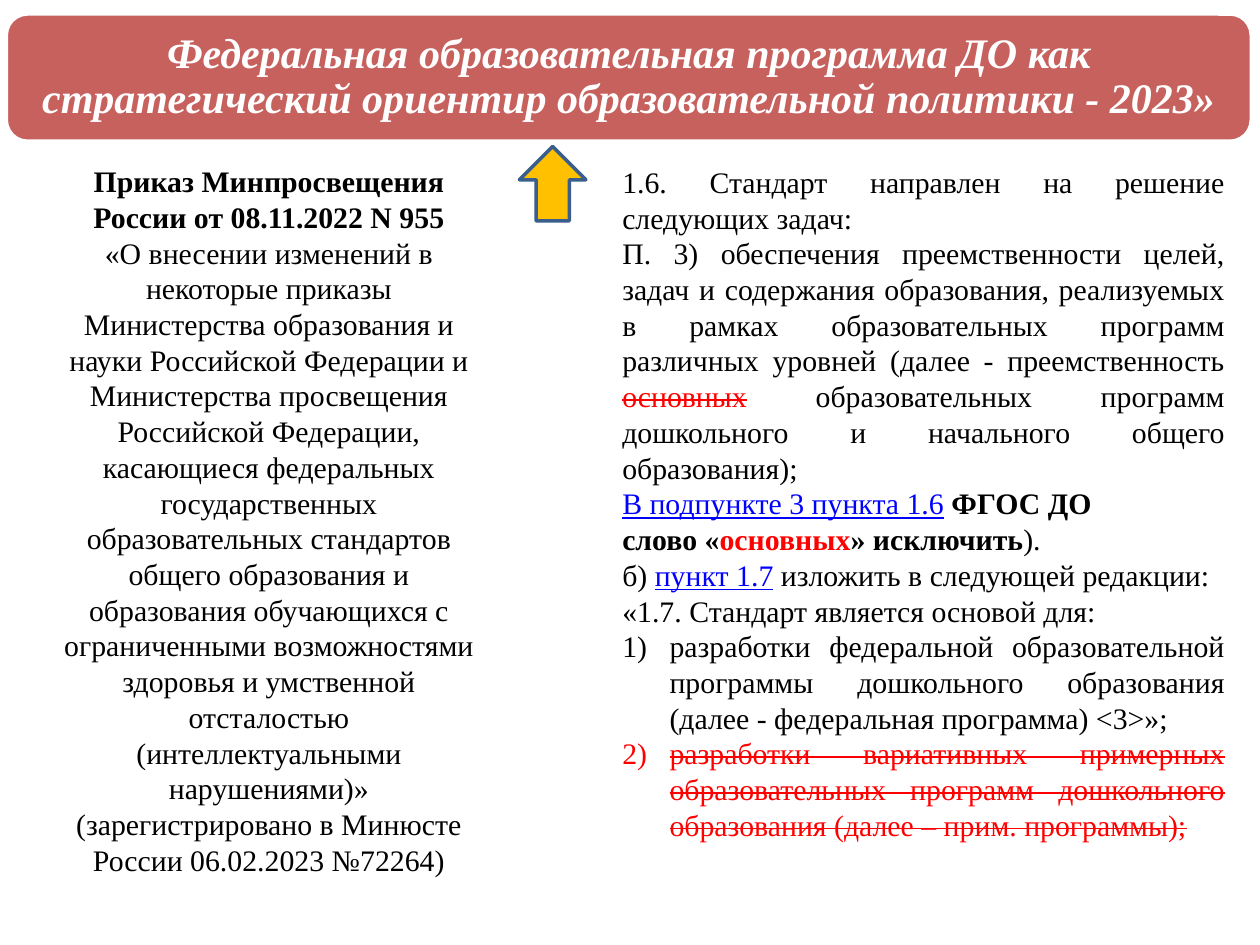
"""Build a slide on the federal preschool education programme."""
from lxml.etree import SubElement
from pptx import Presentation
from pptx.dml.color import RGBColor
from pptx.enum.shapes import MSO_SHAPE
from pptx.enum.text import MSO_ANCHOR, MSO_AUTO_SIZE, PP_ALIGN
from pptx.oxml.ns import qn
from pptx.util import Pt

FONT = "Times New Roman"
BLACK = RGBColor(0x00, 0x00, 0x00)
WHITE = RGBColor(0xFF, 0xFF, 0xFF)
RED = RGBColor(0xFF, 0x00, 0x00)
LINK = RGBColor(0x00, 0x00, 0xFF)
BANNER = RGBColor(0xC0, 0x50, 0x4D)
GOLD = RGBColor(0xFF, 0xC0, 0x00)
NAVY = RGBColor(0x3A, 0x5F, 0x8C)

TITLE = ("Федеральная образовательная программа ДО как стратегический "
         "ориентир образовательной политики - 2023»")

ORDER = [[
    ("Приказ Минпросвещения России от 08.11.2022 N 955\v", BLACK, "b"),
    ("«О внесении изменений в некоторые приказы Министерства образования и "
     "науки Российской Федерации и Министерства просвещения Российской "
     "Федерации, касающиеся федеральных государственных образовательных "
     "стандартов общего образования и образования обучающихся с ограниченными "
     "возможностями здоровья и умственной отсталостью (интеллектуальными "
     "нарушениями)»\v(зарегистрировано в Минюсте России 06.02.2023 №72264)",
     BLACK, ""),
]]

CHANGES = [
    [("1.6. Стандарт направлен на решение следующих задач:", BLACK, "")],
    [("П. 3) обеспечения преемственности целей, задач и содержания "
      "образования, реализуемых в рамках образовательных программ различных "
      "уровней (далее - преемственность ", BLACK, ""),
     ("основных", RED, "s"),
     (" образовательных программ дошкольного и начального общего "
      "образования);", BLACK, "")],
    [("В подпункте 3 пункта 1.6", LINK, "u"), (" ", BLACK, ""),
     ("ФГОС ДО", BLACK, "b")],
    [("слово «", BLACK, "b"), ("основных", RED, "b"),
     ("» исключить", BLACK, "b"), (").", BLACK, "")],
    [("б) ", BLACK, ""), ("пункт 1.7", LINK, "u"),
     (" изложить в следующей редакции:", BLACK, "")],
    [("«1.7. Стандарт является основой для:", BLACK, "")],
]

TASKS = [
    [("разработки федеральной образовательной программы дошкольного "
      "образования (далее - федеральная программа) <3>»;", BLACK, "")],
    [("разработки вариативных примерных образовательных программ дошкольного "
      "образования (далее – прим. программы);", RED, "s")],
]


def add_block(s, shape, left, top, width, height, fill, line):
    """Add a filled preset shape with a 2 pt outline."""
    sp = s.shapes.add_shape(shape, Pt(left), Pt(top), Pt(width), Pt(height))
    sp.shadow.inherit = False
    sp.fill.solid()
    sp.fill.fore_color.rgb = fill
    sp.line.color.rgb = line
    sp.line.width = Pt(2)
    return sp


def add_title(s):
    """Place the title on a slightly transparent banner."""
    banner = add_block(s, MSO_SHAPE.ROUNDED_RECTANGLE, 3.6, 8, 711.4, 72.7,
                       BANNER, WHITE)
    color = banner.fill._xPr.find(".//" + qn("a:srgbClr"))
    SubElement(color, qn("a:alpha"), val="90000")
    sp = s.shapes.title
    sp.element.addprevious(banner.element)
    sp.left, sp.top, sp.width, sp.height = Pt(7.2), Pt(11.5), Pt(704), Pt(65.5)
    tf = sp.text_frame
    tf.text = TITLE
    tf.auto_size = MSO_AUTO_SIZE.NONE
    tf.vertical_anchor = MSO_ANCHOR.MIDDLE
    tf.margin_top = tf.margin_bottom = Pt(7.2)
    p = tf.paragraphs[0]
    p.alignment = PP_ALIGN.CENTER
    p.line_spacing = 0.9
    p.font.name, p.font.size = FONT, Pt(24)
    p.font.bold = p.font.italic = True
    p.font.color.rgb = WHITE


def add_run(p, text, color, style):
    """Add a run; style letters are b(old), u(nderline), s(trike)."""
    for i, part in enumerate(text.split("\v")):
        if i:
            p.add_line_break()
        if not part:
            continue
        r = p.add_run()
        r.text = part
        r.font.color.rgb = color
        if "b" in style:
            r.font.bold = True
        if "u" in style:
            r.font.underline = True
        if "s" in style:
            r.font._element.set("strike", "sngStrike")


def number(p):
    """Give a paragraph a hanging automatic number."""
    pPr = p._p.get_or_add_pPr()
    pPr.set("marL", str(Pt(27)))
    pPr.set("indent", str(Pt(-27)))
    bullet = pPr.makeelement(qn("a:buAutoNum"), {"type": "arabicParenR"})
    pPr.insert(0, bullet)


def add_text(s, left, top, width, height, align, paragraphs, numbered=()):
    """Add a text box of plain paragraphs followed by numbered ones."""
    sp = s.shapes.add_textbox(Pt(left), Pt(top), Pt(width), Pt(height))
    tf = sp.text_frame
    tf.word_wrap = True
    tf.auto_size = MSO_AUTO_SIZE.SHAPE_TO_FIT_TEXT
    for i, runs in enumerate([*paragraphs, *numbered]):
        p = tf.add_paragraph() if i else tf.paragraphs[0]
        p.alignment = align
        p.font.name, p.font.size = FONT, Pt(17)
        if i >= len(paragraphs):
            number(p)
        for run in runs:
            add_run(p, *run)


def main():
    """Build and save the slide."""
    prs = Presentation()
    prs.slide_width, prs.slide_height = Pt(720), Pt(540)
    s = prs.slides.add_slide(prs.slide_layouts[5])
    add_title(s)
    add_text(s, 348.5, 90, 358.5, 399, PP_ALIGN.JUSTIFY, CHANGES, TASKS)
    add_text(s, 25.2, 89.5, 257, 419, PP_ALIGN.CENTER, ORDER)
    arrow = add_block(s, MSO_SHAPE.DOWN_ARROW, 296.8, 83.7, 38, 42.5, GOLD, NAVY)
    arrow.rotation = 180
    prs.save("out.pptx")


if __name__ == "__main__":
    main()
